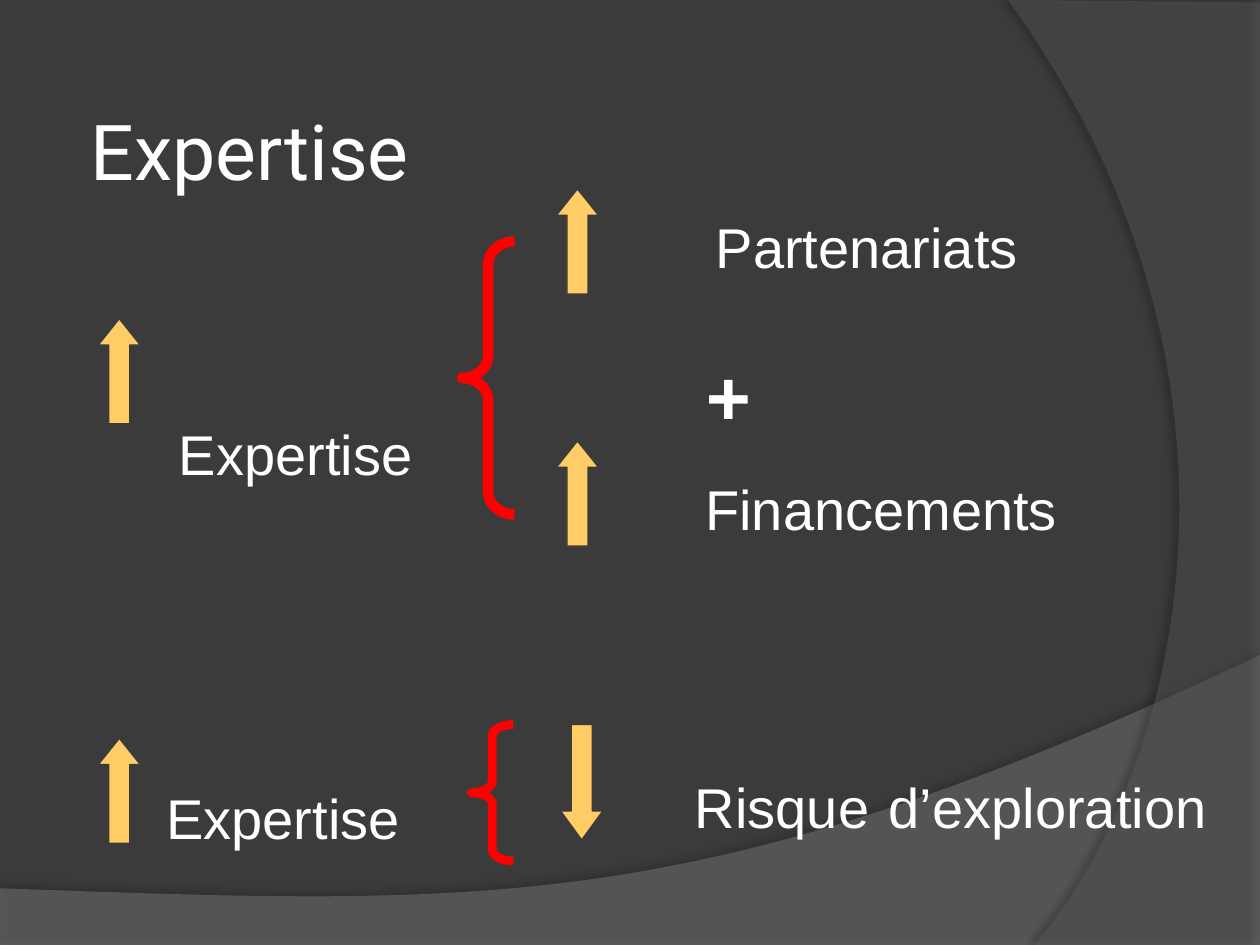
"""Build a slide on how expertise drives partnerships, funding and exploration risk."""
from dataclasses import dataclass

from lxml.etree import SubElement
from pptx import Presentation
from pptx.dml.color import RGBColor
from pptx.enum.shapes import MSO_SHAPE
from pptx.oxml.ns import qn
from pptx.util import Emu, Inches, Pt

COLUMNS, ROWS = 120, 90
CELL = Inches(10) // COLUMNS
CURVE_STEPS = 48

BACKGROUND = RGBColor(0x3B, 0x3B, 0x3B)
HILL = RGBColor(0x7F, 0x7F, 0x7F)
ARC = RGBColor(0x5E, 0x5E, 0x5E)
GOLD = RGBColor(0xFF, 0xCC, 0x66)
RED = RGBColor(0xFF, 0x00, 0x00)
WHITE = RGBColor(0xFF, 0xFF, 0xFF)

Point = tuple[float, float]


@dataclass(frozen=True)
class Box:
    column: float
    row: float
    columns: float
    rows: float

    def lengths(self) -> tuple[Emu, ...]:
        return tuple(map(cells, (self.column, self.row, self.columns, self.rows)))


@dataclass(frozen=True)
class Trend:
    box: Box
    direction: MSO_SHAPE = MSO_SHAPE.UP_ARROW
    head: float = 0.625


@dataclass(frozen=True)
class Brace:
    box: Box
    curl: float
    weight: float


@dataclass(frozen=True)
class Backdrop:
    corners: tuple[Point, ...]
    curve: tuple[Point, Point, Point]
    color: RGBColor
    opacity: int
    shadow_opacity: int
    shadow_distance: float
    shadow_angle: int


BACKDROPS = (
    Backdrop(((0, 84.6), (0, ROWS), (COLUMNS, ROWS), (COLUMNS, 62.4)),
             ((67.08, 87.48), (46.92, 86.28), (0, 84.6)), HILL, 45, 35, 3.5, 270),
    Backdrop(((COLUMNS, 0.24), (COLUMNS, ROWS), (98.52, ROWS)),
             ((112.2, 74.28), (122.16, 36), (96, 0)), ARC, 40, 45, 4, 180),
)
TRENDS = (
    Trend(Box(9.36, 30.36, 4, 10)),
    Trend(Box(53, 18, 4, 10)),
    Trend(Box(53, 42, 4, 10)),
    Trend(Box(9.36, 70.32, 4, 10)),
    Trend(Box(53.4, 69, 4, 11), MSO_SHAPE.DOWN_ARROW, 0.688),
)
BRACES = (
    Brace(Box(44, 23, 5, 26), 0.433, 6),
    Brace(Box(44.88, 69, 4, 13), 0.271, 5),
)


def cells(count: float) -> Emu:
    """Turn a number of grid cells into a length."""
    return Emu(round(count * CELL))


def bezier(start: Point, curve: tuple[Point, Point, Point]) -> list[Point]:
    """Return points along a cubic curve, without its start."""
    points = []
    for step in range(1, CURVE_STEPS + 1):
        t = step / CURVE_STEPS
        weights = ((1 - t) ** 3, 3 * t * (1 - t) ** 2, 3 * t * t * (1 - t), t ** 3)
        points.append(tuple(sum(w * p[axis] for w, p in zip(weights, (start, *curve)))
                            for axis in (0, 1)))
    return points


def set_opacity(color_element, percent: int) -> None:
    """Give a colour element its opacity."""
    SubElement(color_element, qn("a:alpha"), val=str(percent * 1000))


def draw_backdrop(slide, backdrop: Backdrop) -> None:
    """Draw a translucent curved area with a soft shadow."""
    outline = [*backdrop.corners, *bezier(backdrop.corners[-1], backdrop.curve)]
    vertices = [(cells(x), cells(y)) for x, y in outline]
    builder = slide.shapes.build_freeform(*vertices[0])
    builder.add_line_segments(vertices[1:], close=True)
    area = builder.convert_to_shape()
    area.fill.solid()
    area.fill.fore_color.rgb = backdrop.color
    area.line.fill.background()
    area.shadow.inherit = False
    properties = area.element.spPr
    set_opacity(properties.find(qn("a:solidFill")).find(qn("a:srgbClr")), backdrop.opacity)
    shadow = SubElement(properties.find(qn("a:effectLst")), qn("a:outerShdw"),
                        blurRad=str(Pt(4)), dist=str(Pt(backdrop.shadow_distance)),
                        dir=str(backdrop.shadow_angle * 60000), rotWithShape="0")
    set_opacity(SubElement(shadow, qn("a:srgbClr"), val="000000"), backdrop.shadow_opacity)


def draw_trend(slide, trend: Trend) -> None:
    """Draw an arrow for a rise or a fall."""
    arrow = slide.shapes.add_shape(trend.direction, *trend.box.lengths())
    arrow.adjustments[0] = 0.5
    arrow.adjustments[1] = trend.head
    arrow.shadow.inherit = False
    arrow.fill.solid()
    arrow.fill.fore_color.rgb = GOLD
    arrow.line.color.rgb = BACKGROUND
    arrow.line.width = Pt(0.75)


def draw_brace(slide, brace: Brace) -> None:
    """Draw a brace that gathers effects."""
    bracket = slide.shapes.add_shape(MSO_SHAPE.LEFT_BRACE, *brace.box.lengths())
    bracket.adjustments[0] = brace.curl
    bracket.adjustments[1] = 0.5
    bracket.shadow.inherit = False
    bracket.fill.background()
    bracket.line.color.rgb = RED
    bracket.line.width = Pt(brace.weight)


def write(slide, text: str, box: Box, *, size: float = 32, font: str = "Arial",
          bold: bool = False, wrap: bool = True, left: float = 1.2, top: float = 1.2,
          space_size: float | None = None) -> None:
    """Write one line of text, with an optional size for its spaces."""
    frame = slide.shapes.add_textbox(*box.lengths()).text_frame
    frame.word_wrap = wrap
    frame.margin_left, frame.margin_top = cells(left), cells(top)
    pieces = text.partition(" ") if space_size else (text,)
    for piece in pieces:
        run = frame.paragraphs[0].add_run()
        run.text = piece
        run.font.size = Pt(space_size if piece == " " else size)
        run.font.name = font
        run.font.bold = bold
        run.font.color.rgb = WHITE


def main() -> None:
    """Build and save the slide."""
    deck = Presentation()
    deck.slide_width, deck.slide_height = cells(COLUMNS), cells(ROWS)
    slide = deck.slides.add_slide(deck.slide_layouts[6])
    slide.background.fill.solid()
    slide.background.fill.fore_color.rgb = BACKGROUND
    for backdrop in BACKDROPS:
        draw_backdrop(slide, backdrop)
    for trend in TRENDS:
        draw_trend(slide, trend)
    for brace in BRACES:
        draw_brace(slide, brace)
    write(slide, "Expertise", Box(7.44, 8.64, 96.48, 10.08), size=44, font="Roboto")
    write(slide, "Expertise", Box(13.08, 23.4, 34.2, 26.76), left=3.96, top=16.56)
    write(slide, "Partenariats", Box(67, 19, 42, 7.56))
    write(slide, "+", Box(66, 32, 8.28, 10), size=44, font="Courier New", bold=True, wrap=False)
    write(slide, "Financements", Box(66, 44, 54, 7.56))
    write(slide, "Expertise", Box(11.28, 72.24, 39, 9.24), left=4.56, top=2.4)
    write(slide, "Risque d’exploration", Box(65, 71, 52, 9.24), space_size=40)
    deck.save("out.pptx")


if __name__ == "__main__":
    main()
